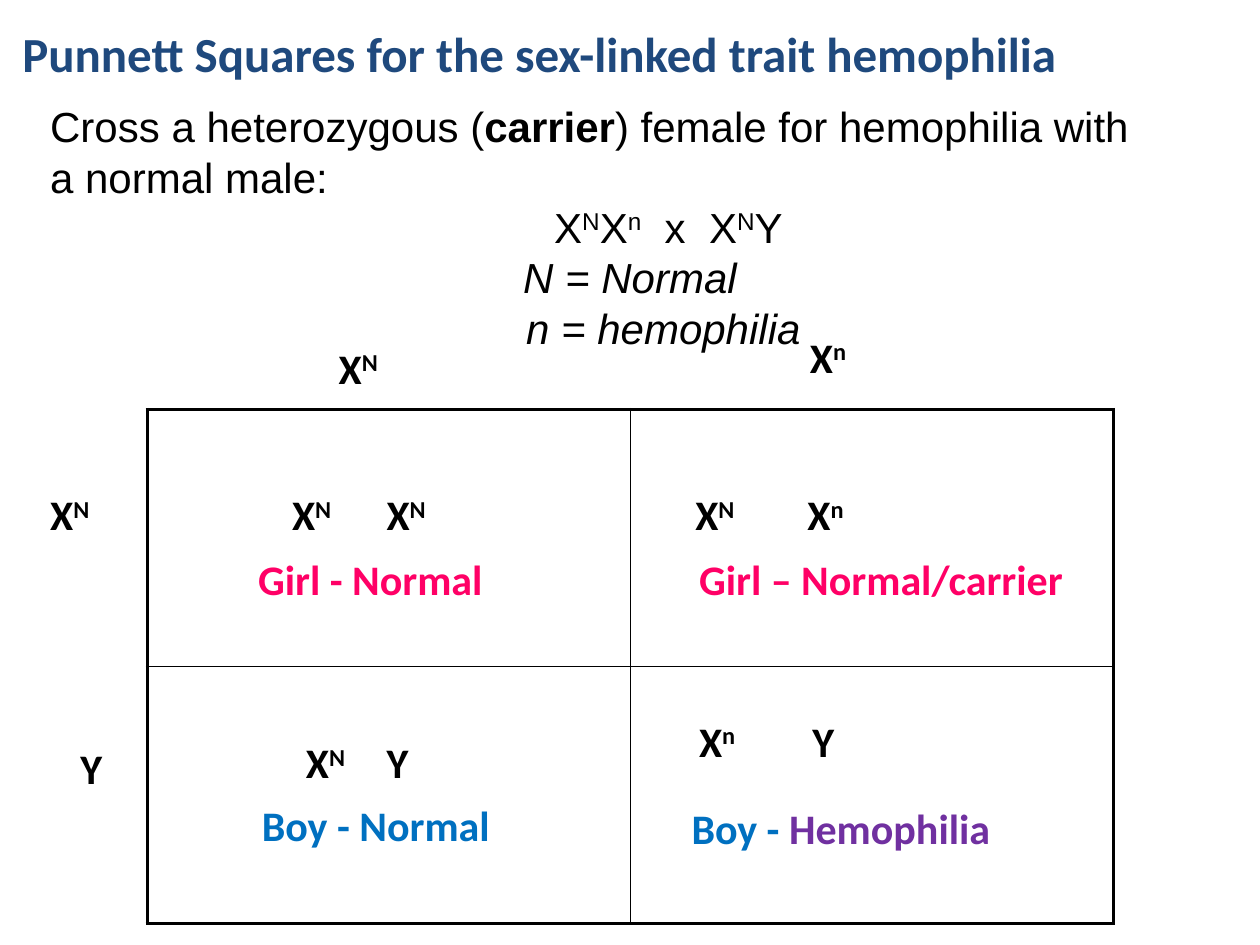
from lxml.etree import SubElement
from pptx import Presentation
from pptx.dml.color import RGBColor
from pptx.enum.text import MSO_AUTO_SIZE, PP_ALIGN
from pptx.oxml.ns import qn
from pptx.util import Inches, Pt

BLACK = RGBColor(0x00, 0x00, 0x00)
NAVY = RGBColor(0x1F, 0x49, 0x7D)
PINK = RGBColor(0xFF, 0x00, 0x66)
BLUE = RGBColor(0x00, 0x70, 0xC0)
PURPLE = RGBColor(0x70, 0x30, 0xA0)


def add_text_box(left, top, width, height, text="", color=BLACK, size=24):
    """Add a bold Calibri text box and return its text frame."""
    box = slide.shapes.add_textbox(Inches(left), Inches(top), Inches(width), Inches(height))
    frame = box.text_frame
    frame.word_wrap = True
    frame.auto_size = MSO_AUTO_SIZE.SHAPE_TO_FIT_TEXT
    paragraph = frame.paragraphs[0]
    paragraph.font.name = "Calibri"
    paragraph.font.size = Pt(size)
    paragraph.font.bold = True
    paragraph.font.color.rgb = color
    if text:
        paragraph.add_run().text = text
    return frame


def add_allele(paragraph, allele):
    """Write a chromosome letter, with any following letter as superscript."""
    paragraph.add_run().text = allele[0]
    if len(allele) > 1:
        superscript = paragraph.add_run()
        superscript.text = allele[1:]
        superscript.font._element.set("baseline", "30000")


presentation = Presentation()
presentation.slide_width = Inches(10)
presentation.slide_height = Inches(7.5)
slide = presentation.slides.add_slide(presentation.slide_layouts[6])

# Punnett square grid
grid = slide.shapes.add_table(2, 2, Inches(1.17), Inches(3.25), Inches(7.67), Inches(4.08)).table
grid.first_row = False
grid.horz_banding = False
for row in range(2):
    for column in range(2):
        cell = grid.cell(row, column)
        cell.fill.background()
        properties = cell._tc.get_or_add_tcPr()
        outer_sides = {"lnL": column == 0, "lnR": column == 1, "lnT": row == 0, "lnB": row == 1}
        for position, (side, is_outer) in enumerate(outer_sides.items()):
            border = SubElement(properties, qn(f"a:{side}"), w=str(Pt(2.25 if is_outer else 1)))
            fill = SubElement(border, qn("a:solidFill"))
            SubElement(fill, qn("a:srgbClr"), val=str(BLACK))
            properties.insert(position, border)

# Title
title = add_text_box(0.08, 0.14, 9.73, 0.57,
                     "Punnett Squares for the sex-linked trait hemophilia", NAVY, 28)
title.word_wrap = False

# Description of the cross
description = add_text_box(0.3, 0.75, 8.94, 2.42)
intro = description.paragraphs[0]
for text, is_bold in [("Cross a heterozygous (", False), ("carrier", True),
                      (") female for hemophilia with a normal male:", False)]:
    run = intro.add_run()
    run.text = text
    run.font.bold = is_bold

cross = description.add_paragraph()
add_allele(cross, "XN")
add_allele(cross, "Xn")
times = cross.add_run()
times.text = " x"
times.font._element.set("spc", "667")
cross.add_run().text = " "
add_allele(cross, "XN")
add_allele(cross, "Y")

normal_key = description.add_paragraph()
normal_key.text = "N = Normal"
hemophilia_key = description.add_paragraph()
hemophilia_key.text = "n = hemophilia"
for paragraph in (normal_key, hemophilia_key):
    paragraph.alignment = PP_ALIGN.CENTER
    paragraph.font.italic = True
for paragraph, indent in [(cross, 4), (normal_key, 0.46), (hemophilia_key, 0.99)]:
    paragraph._p.get_or_add_pPr().set("marL", str(Inches(indent)))
for paragraph in description.paragraphs:
    paragraph.font.name = "Arial"
    paragraph.font.size = Pt(24)
    paragraph.font.bold = False
    paragraph.font.color.rgb = BLACK

# Parent alleles, then the pair inside each square
alleles = [
    (2.59, 2.67, "XN"), (6.33, 2.58, "Xn"),
    (0.3, 3.83, "XN"), (0.54, 5.84, "Y"),
    (2.22, 3.83, "XN"), (2.97, 3.83, "XN"),
    (5.42, 3.83, "XN"), (6.31, 3.83, "Xn"),
    (2.33, 5.8, "XN"), (2.97, 5.8, "Y"),
    (5.45, 5.63, "Xn"), (6.35, 5.63, "Y"),
]
for left, top, allele in alleles:
    add_allele(add_text_box(left, top, 0.67, 0.5).paragraphs[0], allele)

# Offspring
add_text_box(1.95, 4.34, 2.56, 0.5, "Girl - Normal", PINK)
add_text_box(5.45, 4.34, 3.14, 0.5, "Girl – Normal/carrier", PINK)
add_text_box(1.98, 6.3, 2.56, 0.5, "Boy - Normal", BLUE)
affected_boy = add_text_box(5.39, 6.32, 2.94, 0.5, "Boy - ", BLUE)
condition = affected_boy.paragraphs[0].add_run()
condition.text = "Hemophilia"
condition.font.color.rgb = PURPLE

presentation.save("out.pptx")
